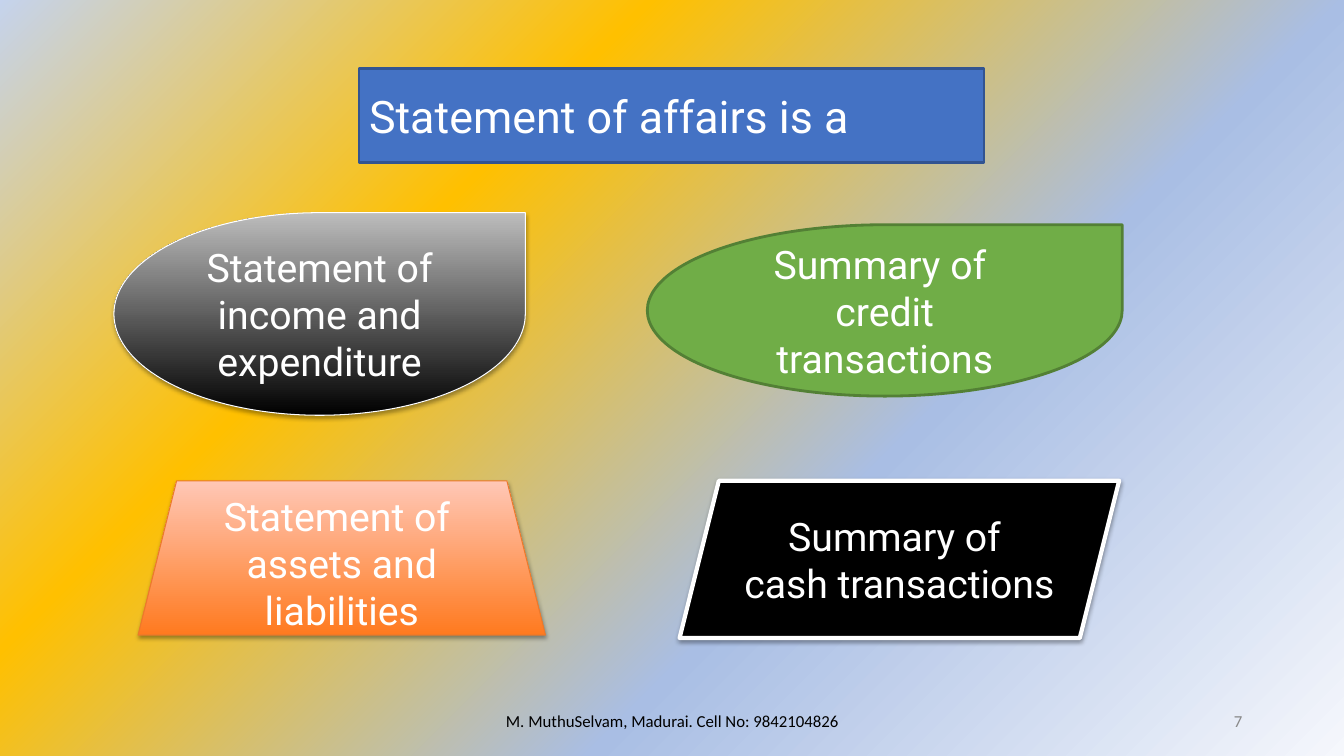
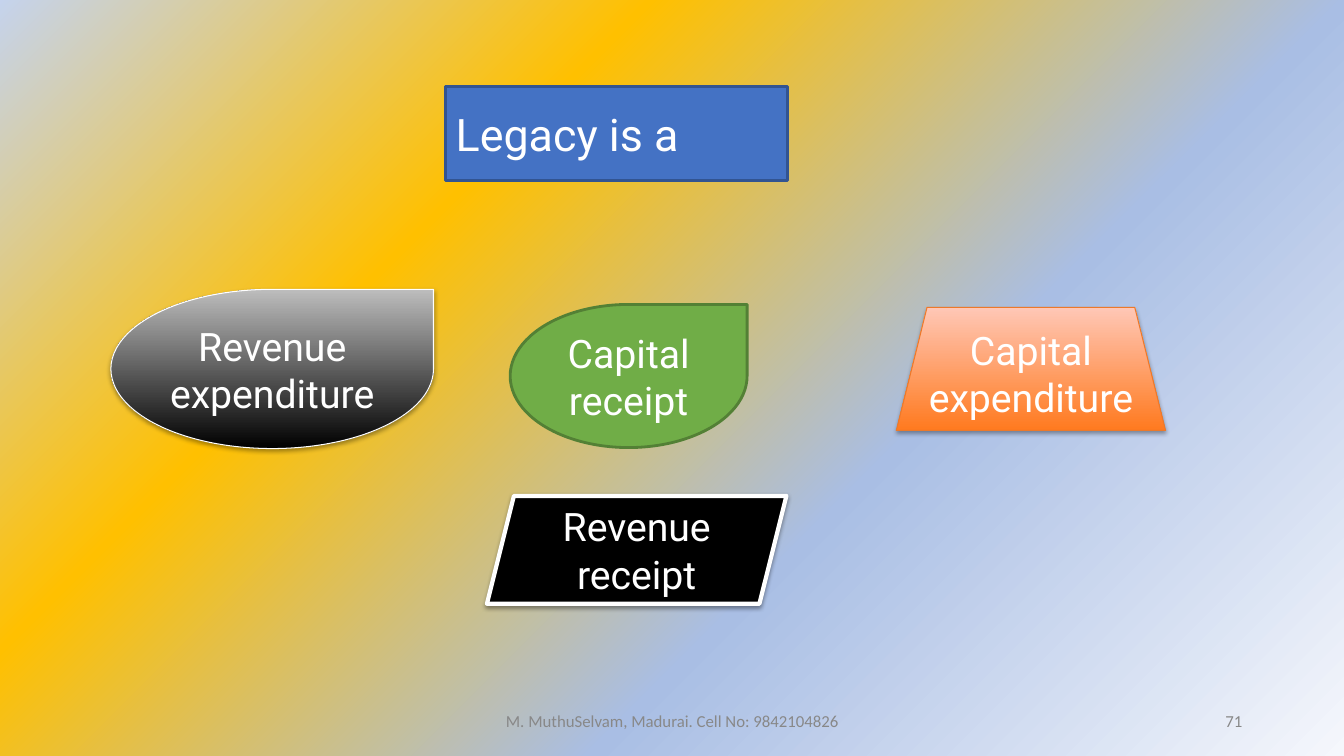
from lxml import etree
from pptx import Presentation
from pptx.dml.color import RGBColor
from pptx.enum.shapes import MSO_SHAPE
from pptx.enum.text import MSO_ANCHOR, MSO_AUTO_SIZE, PP_ALIGN
from pptx.oxml import parse_xml
from pptx.oxml.ns import nsdecls, qn
from pptx.util import Pt

PX = 9144
TITLE_ONLY = 5
LEFT, CENTER, RIGHT = PP_ALIGN.LEFT, PP_ALIGN.CENTER, PP_ALIGN.RIGHT
MIDDLE = MSO_ANCHOR.MIDDLE
NO_AUTOFIT = MSO_AUTO_SIZE.NONE
TEARDROP = MSO_SHAPE.TEAR
TRAPEZOID = MSO_SHAPE.TRAPEZOID
PARALLELOGRAM = MSO_SHAPE.PARALLELOGRAM

BLACK = RGBColor(0x00, 0x00, 0x00)
WHITE = RGBColor(0xFF, 0xFF, 0xFF)
SILVER = RGBColor(0xBD, 0xBD, 0xBD)
GRAY = RGBColor(0x88, 0x88, 0x88)
BLUE = RGBColor(0x44, 0x72, 0xC4)
DARK_BLUE = RGBColor(0x32, 0x54, 0x91)
GREEN = RGBColor(0x70, 0xAD, 0x47)
DARK_GREEN = RGBColor(0x53, 0x80, 0x35)
ORANGE = RGBColor(0xFF, 0x7A, 0x1F)
PEACH = RGBColor(0xFF, 0xC7, 0xB6)
RUST = RGBColor(0xEC, 0x79, 0x2B)
MIST = RGBColor(0xF5, 0xF7, 0xFC)
SKY = RGBColor(0xA9, 0xBE, 0xE4)
GOLD = RGBColor(0xFF, 0xC0, 0x00)
PALE_BLUE = RGBColor(0xC5, 0xD3, 0xED)

BACKDROP = [(0, MIST), (36, SKY), (69, GOLD), (100, PALE_BLUE)]
FOOTER = "M. MuthuSelvam, Madurai. Cell No: 9842104826"

STYLES = {
    "silver": (TEARDROP, [BLACK, SILVER], WHITE, 0.75, (35, 23000)),
    "orange": (TRAPEZOID, [ORANGE, PEACH], RUST, 0.75, (35, 23000)),
    "black": (PARALLELOGRAM, [BLACK], WHITE, 3, (38, 20000)),
    "green": (TEARDROP, [GREEN], DARK_GREEN, 2, None),
}

PAGES = [
    ("Statement of affairs is a", (356, 68, 620, 93), "7", BLACK, [
        ("silver", (113, 211, 408, 201), ["Statement of income and expenditure"]),
        ("orange", (137, 477, 404, 153), ["Statement of ", "assets and liabilities"]),
        ("black", (674, 477, 436, 156), ["Summary of ", "cash transactions"]),
        ("green", (642, 223, 471, 170), ["Summary of ", "credit transactions"]),
    ]),
    ("Legacy is a", (442, 86, 339, 93), "71", GRAY, [
        ("silver", (110, 287, 320, 158), ["Revenue expenditure"]),
        ("orange", (889, 305, 267, 122), ["Capital expenditure"]),
        ("black", (483, 492, 297, 107), ["Revenue receipt"]),
        ("green", (506, 302, 235, 142), ["Capital receipt"]),
    ]),
]


def scaled(frame):
    return [length * PX for length in frame]


def write(box, lines, align, size, font, color):
    text = box.text_frame
    text.word_wrap = True
    text.auto_size = NO_AUTOFIT
    text.vertical_anchor = MIDDLE
    for index, line in enumerate(lines):
        para = text.add_paragraph() if index else text.paragraphs[0]
        para.alignment = align
        span = para.add_run()
        span.text = line
        span.font.size = Pt(size)
        span.font.name = font
        span.font.color.rgb = color


deck = Presentation()
deck.slide_width, deck.slide_height = scaled((1333, 750))

master = deck.slide_master
master.background.fill.solid()
backdrop = master.element.find(".//" + qn("p:bgPr"))
stops = "".join(
    f'<a:gs pos="{position * 1000}"><a:srgbClr val="{color}"/></a:gs>'
    for position, color in BACKDROP
)
backdrop[0] = parse_xml(
    f'<a:gradFill {nsdecls("a")} rotWithShape="1"><a:gsLst>{stops}</a:gsLst>'
    '<a:path path="circle"><a:fillToRect l="100000" t="100000"/></a:path>'
    '<a:tileRect r="-100000" b="-100000"/></a:gradFill>'
)

for heading, heading_frame, number, footer_color, options in PAGES:
    page = deck.slides.add_slide(deck.slide_layouts[TITLE_ONLY])

    title = page.shapes.title
    title.left, title.top, title.width, title.height = scaled(heading_frame)
    wave = etree.SubElement(title.element.spPr, qn("a:prstGeom"), prst="wave")
    etree.SubElement(wave, qn("a:avLst"))
    title.fill.solid()
    title.fill.fore_color.rgb = BLUE
    title.line.color.rgb = DARK_BLUE
    title.line.width = Pt(2)
    write(title, [heading], LEFT, 32, "Roboto", WHITE)

    for style, frame, lines in options:
        preset, fills, outline, weight, shadow = STYLES[style]
        option = page.shapes.add_shape(preset, *scaled(frame))
        if len(fills) > 1:
            option.fill.gradient()
            option.fill.gradient_angle = 90
            for stop, color in zip(option.fill.gradient_stops, fills):
                stop.color.rgb = color
        else:
            option.fill.solid()
            option.fill.fore_color.rgb = fills[0]
        option.line.color.rgb = outline
        option.line.width = Pt(weight)
        option.shadow.inherit = False
        if shadow:
            opacity, distance = shadow
            effects = option.element.spPr.find(qn("a:effectLst"))
            effects.append(parse_xml(
                f'<a:outerShdw {nsdecls("a")} blurRad="40000" dist="{distance}" '
                f'dir="5400000" rotWithShape="0"><a:srgbClr val="{BLACK}">'
                f'<a:alpha val="{opacity * 1000}"/></a:srgbClr></a:outerShdw>'
            ))
        write(option, lines, CENTER, 28, "Roboto", WHITE)

    for caption, frame, align, color in [
        (FOOTER, (442, 695, 450, 40), CENTER, footer_color),
        (number, (942, 695, 300, 40), RIGHT, GRAY),
    ]:
        box = page.shapes.add_textbox(*scaled(frame))
        write(box, [caption], align, 12, "Calibri", color)

deck.save("out.pptx")
